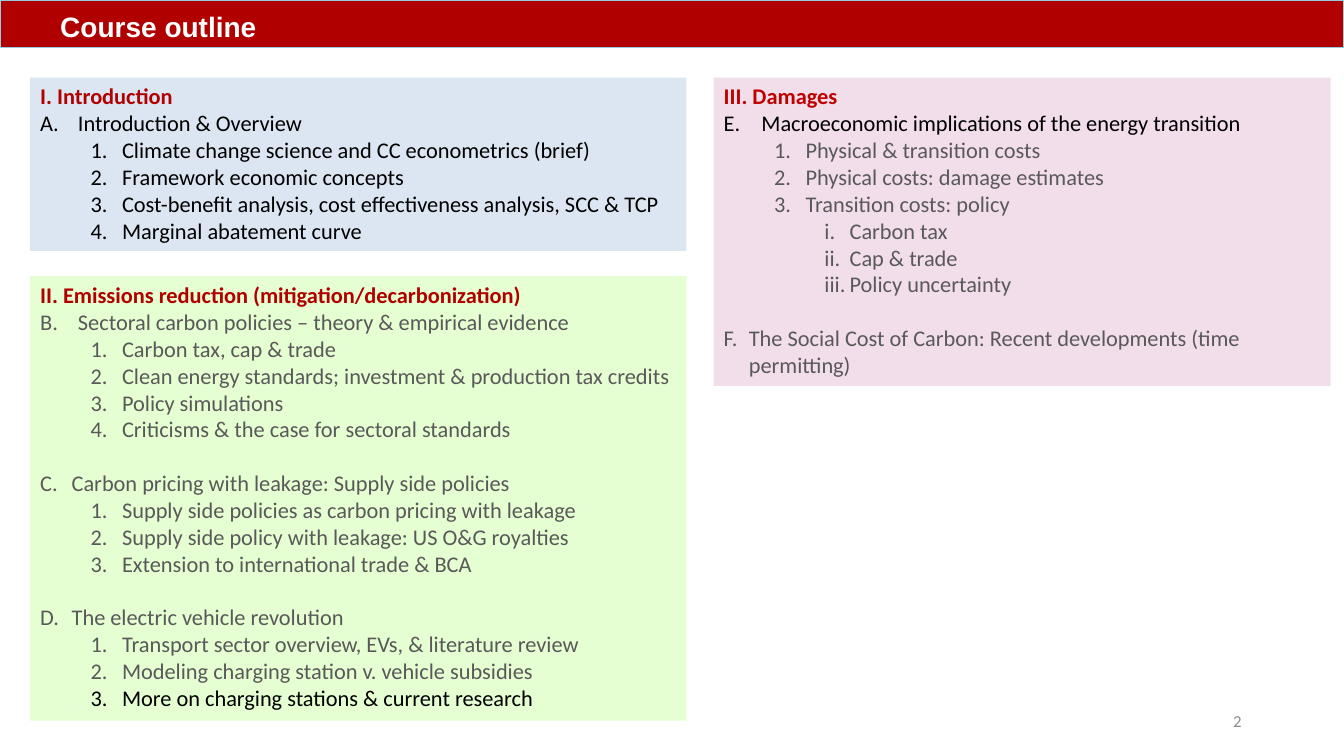
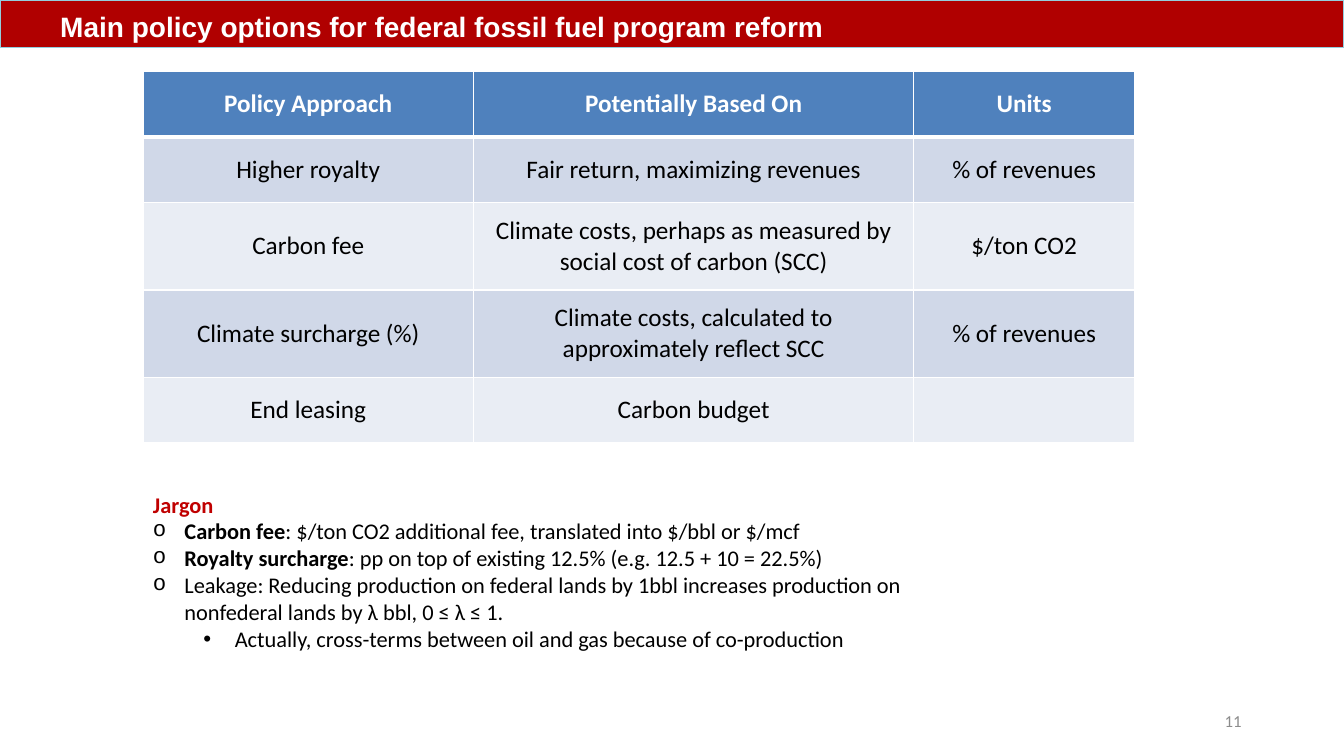
import pptx
import pptx.dml.color
import pptx.enum.shapes
import pptx.enum.text
import pptx.oxml.ns
import pptx.util
from lxml import etree

Pt = pptx.util.Pt
ALIGN = pptx.enum.text.PP_ALIGN
ANCHOR = pptx.enum.text.MSO_ANCHOR

RED, HEADING = "B00000", "C00000"
BLACK, GRAY, WHITE = "000000", "595959", "FFFFFF"

# List levels: indent, hanging width, bullet kind, bullet value
TOPIC_WIDE = (27, 27, "buAutoNum", "alphaUcPeriod")
TOPIC = (22.5, 22.5, "buAutoNum", "alphaUcPeriod")
TOPIC_NARROW = (18, 18, "buAutoNum", "alphaUcPeriod")
NUMBER = (58.5, 22.5, "buAutoNum", "arabicPeriod")
ROMAN = (90, 18, "buAutoNum", "romanLcPeriod")
CIRCLE = (22.5, 22.5, "buChar", "o")
DOT = (58.5, 22.5, "buChar", "•")
DEPTH = {NUMBER: 1, DOT: 1, ROMAN: 2}


def rgb(value):
    return pptx.dml.color.RGBColor.from_string(value)


def sub(parent, tag, **attrs):
    return etree.SubElement(parent, pptx.oxml.ns.qn("a:" + tag), attrs)


class Deck:
    font, size = "Calibri", 16

    def __init__(self):
        self.prs = pptx.Presentation()
        self.prs.slide_width, self.prs.slide_height = Pt(960), Pt(540)
        self.s = None

    def slide(self, title, number):
        """Start a slide with its title band and page number."""
        self.s = self.prs.slides.add_slide(self.prs.slide_layouts[6])
        band = self.box(0, 0, 960, 34, RED)
        band.line.color.rgb = rgb("93CDDD")
        band.line.width = Pt(0)
        tf = band.text_frame
        tf.margin_left = Pt(43)
        tf.vertical_anchor = ANCHOR.BOTTOM
        self.style(tf.paragraphs[0], title, WHITE, size=20, bold=True, font="Arial")

        tf = self.text(678, 500.4, 216, 28.8).text_frame
        tf.vertical_anchor = ANCHOR.MIDDLE
        self.style(tf.paragraphs[0], str(number), "8C8C8C", size=12, align=ALIGN.RIGHT)

    def box(self, x, y, w, h, fill):
        sp = self.s.shapes.add_shape(pptx.enum.shapes.MSO_SHAPE.RECTANGLE,
                                     Pt(x), Pt(y), Pt(w), Pt(h))
        sp.shadow.inherit = False
        sp.fill.solid()
        sp.fill.fore_color.rgb = rgb(fill)
        sp.line.fill.background()
        sp.text_frame.word_wrap = True
        return sp

    def text(self, x, y, w, h):
        sp = self.s.shapes.add_textbox(Pt(x), Pt(y), Pt(w), Pt(h))
        sp.text_frame.word_wrap = True
        return sp

    def style(self, p, text, color, size=None, bold=False, font=None, align=ALIGN.LEFT):
        """Fill a paragraph; a (lead, rest) pair sets the lead in bold."""
        p.alignment = align
        p.font.name = font or self.font
        p.font.size = Pt(size or self.size)
        p.font.bold = bold
        p.font.color.rgb = rgb(color)
        lead, rest = text if isinstance(text, tuple) else ("", text)
        if lead:
            r = p.add_run()
            r.text = lead
            r.font.bold = True
        p.add_run().text = rest

    def bullet(self, p, level, start):
        indent, hang, kind, value = level
        p.level = DEPTH.get(level, 0)
        pPr = p._p.get_or_add_pPr()
        pPr.set("marL", str(Pt(indent)))
        pPr.set("indent", str(-Pt(hang)))
        if kind == "buChar":
            sub(pPr, "buFont", typeface="Courier New" if value == "o" else "Arial")
            sub(pPr, kind, char=value)
        else:
            sub(pPr, "buFont", typeface="+mj-lt")
            first = 1 if p.level else start
            sub(pPr, kind, type=value, startAt=str(first))

    def outline(self, sp, heading, color, items, start=1):
        """Write a red heading and a list of (level, color, texts, gap before)."""
        tf = sp.text_frame
        tf.vertical_anchor = ANCHOR.TOP
        self.style(tf.paragraphs[0], heading, color, bold=True)
        for level, item_color, texts, gap in items:
            for i, text in enumerate(texts):
                p = tf.add_paragraph()
                self.bullet(p, level, start)
                if gap and i == 0:
                    p.space_before = Pt(gap)
                self.style(p, text, item_color)

    def borders(self, cell, top, bottom):
        tcPr = cell._tc.get_or_add_tcPr()
        for side, width in (("L", 1), ("R", 1), ("T", top), ("B", bottom)):
            ln = sub(tcPr, "ln" + side, w=str(Pt(width)))
            sub(sub(ln, "solidFill"), "srgbClr", val=WHITE)

    def table(self, x, y, widths, heights, rows):
        table = self.s.shapes.add_table(len(rows), len(widths), Pt(x), Pt(y),
                                        Pt(sum(widths)), Pt(sum(heights))).table
        for column, w in zip(table.columns, widths):
            column.width = Pt(w)
        for i, (row, h) in enumerate(zip(rows, heights)):
            table.rows[i].height = Pt(h)
            header = i == 0
            fill = "4F81BD" if header else ("E9EDF4", "D0D8E8")[i % 2]
            for j, text in enumerate(row):
                cell = table.cell(i, j)
                self.borders(cell, 3 if i == 1 else 1, 3 if header else 1)
                cell.fill.solid()
                cell.fill.fore_color.rgb = rgb(fill)
                cell.vertical_anchor = ANCHOR.MIDDLE
                self.style(cell.text_frame.paragraphs[0], text,
                           WHITE if header else BLACK, size=18, bold=header,
                           align=ALIGN.CENTER)


def course_outline(deck):
    deck.slide("Course outline", 2)
    gap = 19.2  # one line of text

    # Left column
    left, width = 21.6, 468.7
    deck.outline(deck.box(left, 55.4, width, 123.8, "DCE6F2"), "I. Introduction", RED, [
        (TOPIC_WIDE, BLACK, ["Introduction & Overview"], 0),
        (NUMBER, BLACK, ["Climate change science and CC econometrics (brief)",
                         "Framework economic concepts",
                         "Cost-benefit analysis, cost effectiveness analysis, SCC & TCP",
                         "Marginal abatement curve"], 0),
    ])
    deck.outline(
        deck.box(left, 197.3, width, 317.5, "E5FED2"),
        "II. Emissions reduction (mitigation/decarbonization)", RED, [
            (TOPIC_WIDE, GRAY, ["Sectoral carbon policies – theory & empirical evidence"], 0),
            (NUMBER, GRAY, ["Carbon tax, cap & trade",
                            "Clean energy standards; investment & production tax credits",
                            "Policy simulations",
                            "Criticisms & the case for sectoral standards"], 0),
            (TOPIC, GRAY, ["Carbon pricing with leakage: Supply side policies"], gap),
            (NUMBER, GRAY, ["Supply side policies as carbon pricing with leakage",
                            "Supply side policy with leakage: US O&G royalties",
                            "Extension to international trade & BCA"], 0),
            (TOPIC, GRAY, ["The electric vehicle revolution"], gap),
            (NUMBER, GRAY, ["Transport sector overview, EVs, & literature review",
                            "Modeling charging station v. vehicle subsidies"], 0),
            (NUMBER, BLACK, ["More on charging stations & current research"], 0),
        ], start=2)

    # Right column
    deck.outline(deck.box(509.8, 55.4, 440.6, 220.3, "F2DEEB"), "III. Damages", HEADING, [
        (TOPIC_WIDE, BLACK, ["Macroeconomic implications of the energy transition"], 0),
        (NUMBER, GRAY, ["Physical & transition costs",
                        "Physical costs: damage estimates",
                        "Transition costs: policy"], 0),
        (ROMAN, GRAY, ["Carbon tax", "Cap & trade", "Policy uncertainty"], 0),
        (TOPIC_NARROW, GRAY,
         ["The Social Cost of Carbon: Recent developments (time permitting)"], gap),
    ], start=5)


def policy_options(deck):
    deck.slide("Main policy options for federal fossil fuel program reform", 11)
    left = 102.2

    # Options table
    low, high = 46.8, 62.4
    deck.table(left, 51.1, [236, 314.6, 157.6], [low, low, high, high, low], [
        ("Policy Approach", "Potentially Based On", "Units"),
        ("Higher royalty", "Fair return, maximizing revenues", "% of revenues"),
        ("Carbon fee", "Climate costs, perhaps as measured by social cost of carbon (SCC)",
         "$/ton CO2"),
        ("Climate surcharge (%)", "Climate costs, calculated to approximately reflect SCC",
         "% of revenues"),
        ("End leasing", "Carbon budget", ""),
    ])

    # Definitions
    deck.outline(deck.text(left, 347, 554.4, 123.8), "Jargon", HEADING, [
        (CIRCLE, BLACK, [
            ("Carbon fee", ": $/ton CO2 additional fee, translated into $/bbl or $/mcf"),
            ("Royalty surcharge", ": pp on top of existing 12.5% (e.g. 12.5 + 10 = 22.5%)"),
            "Leakage: Reducing production on federal lands by 1bbl increases production on "
            "nonfederal lands by λ bbl, 0 ≤ λ ≤ 1."], 0),
        (DOT, BLACK,
         ["Actually, cross-terms between oil and gas because of co-production"], 0),
    ])


def main():
    deck = Deck()
    course_outline(deck)
    policy_options(deck)
    deck.prs.save("out.pptx")


if __name__ == "__main__":
    main()
